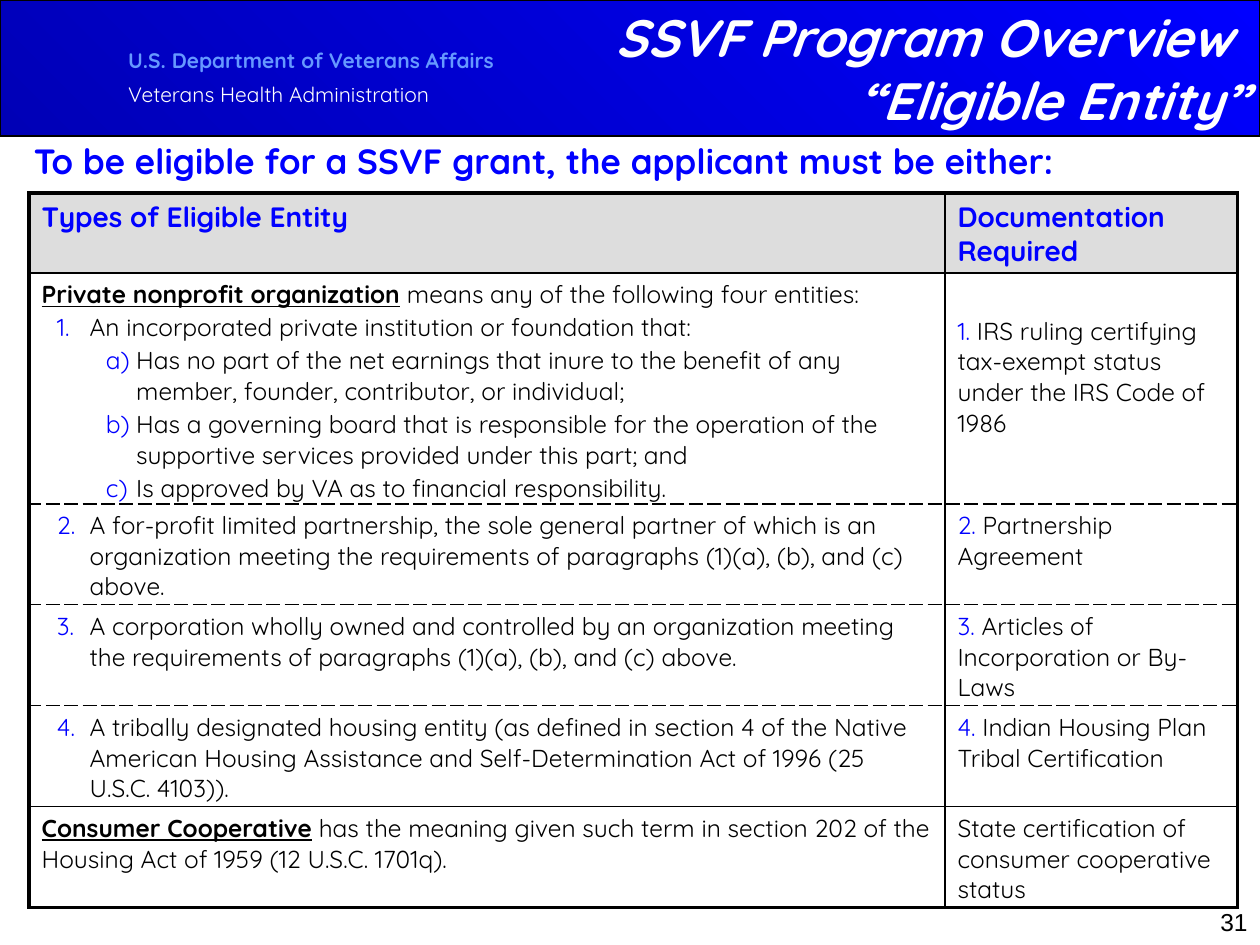
from lxml import etree
from pptx import Presentation
from pptx.dml.color import RGBColor
from pptx.enum import shapes, text
from pptx.oxml.ns import qn
from pptx.util import Pt

FONT = "Quicksand"
BLUE, BLACK, WHITE, GREY = "0000FF", "000000", "FFFFFF", "DDDDDD"
RIGHT = text.PP_ALIGN.RIGHT

TITLE = "SSVF Program Overview \n“Eligible Entity”"
LEAD = "To be eligible for a SSVF grant, the applicant must be either:"
AGENCY = [
    ("U.S. Department of Veterans Affairs", "6699FF", True),
    ("Veterans Health Administration", WHITE, False),
]
PAGE = "31"
HEADERS = ["Types of Eligible Entity", "Documentation Required"]

LEVELS = {
    "plain": None,
    "number": ("arabicPeriod", 27.4, -18.7),
    "letter": ("alphaLcParenR", 54, -17.3),
}
ROWS = [
    (
        [
            ("plain", 1, "Private nonprofit organization", " means any of the following four entities:"),
            ("number", 1, "", "An incorporated private institution or foundation that:"),
            ("letter", 1, "", "Has no part of the net earnings that inure to the benefit of any member, founder, contributor, or individual;"),
            ("letter", 1, "", "Has a governing board that is responsible for the operation of the supportive services provided under this part; and"),
            ("letter", 1, "", "Is approved by VA as to financial responsibility."),
        ],
        ("1.", " IRS ruling certifying tax-exempt status under the IRS Code of 1986"),
    ),
    (
        [("number", 2, "", "A for-profit limited partnership, the sole general partner of which is an organization meeting the requirements of paragraphs (1)(a), (b), and (c) above.")],
        ("2.", " Partnership Agreement"),
    ),
    (
        [("number", 3, "", "A corporation wholly owned and controlled by an organization meeting the requirements of paragraphs (1)(a), (b), and (c) above.")],
        ("3.", " Articles of Incorporation or By-Laws"),
    ),
    (
        [("number", 4, "", "A tribally designated housing entity (as defined in section 4 of the Native American Housing Assistance and Self-Determination Act of 1996 (25 U.S.C. 4103)).")],
        ("4.", " Indian Housing Plan Tribal Certification"),
    ),
    (
        [("plain", 1, "Consumer Cooperative", " has the meaning given such term in section 202 of the Housing Act of 1959 (12 U.S.C. 1701q).")],
        ("", "State certification of consumer cooperative status"),
    ),
]
COL_WIDTHS = [523.4, 167]
ROW_HEIGHTS = [45.7, 132] + [57.7] * 4
RULES = [(2.25, "solid"), (1, "solid")] + [(1, "sysDash")] * 3 + [(1, "solid"), (2.25, "solid")]
UPRIGHTS = [(2.25, "solid"), (1, "solid"), (2.25, "solid")]


def rgb(value):
    return RGBColor.from_string(value)


def write(p, words, size=14, color=BLACK, bold=False, italic=False, underline=False, font=FONT):
    for i, line in enumerate(words.split("\n")):
        if i:
            p.add_line_break()
        r = p.add_run()
        r.text = line
        f = r.font
        f.name, f.size, f.bold, f.italic, f.underline = font, Pt(size), bold, italic, underline
        f.color.rgb = rgb(color)


def place(s, x, y, w, h):
    s.left, s.top, s.width, s.height = Pt(x), Pt(y), Pt(w), Pt(h)
    tf = s.text_frame
    tf.word_wrap = True
    tf.auto_size = text.MSO_AUTO_SIZE.NONE
    return tf


def next_paragraph(tf, i, gap):
    p = tf.add_paragraph() if i else tf.paragraphs[0]
    p.space_before = Pt(gap if i else 0)
    return p


def indent(p, left, first):
    pPr = p._p.get_or_add_pPr()
    pPr.set("marL", str(Pt(left)))
    pPr.set("indent", str(Pt(first)))
    return pPr


def number(p, scheme, left, first, start):
    pPr = indent(p, left, first)
    clr = etree.SubElement(pPr, qn("a:buClr"))
    etree.SubElement(clr, qn("a:srgbClr"), val=BLUE)
    etree.SubElement(pPr, qn("a:buAutoNum"), type=scheme, startAt=str(start))


def borders(cell, sides):
    tcPr = cell._tc.get_or_add_tcPr()
    for i, (side, (width, dash)) in enumerate(sides.items()):
        ln = etree.Element(qn("a:ln" + side), w=str(Pt(width)))
        fill = etree.SubElement(ln, qn("a:solidFill"))
        etree.SubElement(fill, qn("a:srgbClr"), val=BLACK)
        etree.SubElement(ln, qn("a:prstDash"), val=dash)
        tcPr.insert(i, ln)


def add_banner(s):
    sp = s.shapes.add_shape(shapes.MSO_SHAPE.RECTANGLE, 0, 0, Pt(720), Pt(77.8))
    sp.shadow.inherit = False
    sp.fill.gradient()
    sp.fill.gradient_angle = 45
    for stop, color, position in zip(sp.fill.gradient_stops, ("0000B6", BLUE), (0, 1)):
        stop.color.rgb = rgb(color)
        stop.position = position
    sp.line.color.rgb = rgb(BLACK)
    sp.line.width = Pt(0.75)
    tf = place(s.shapes.add_textbox(0, 0, 0, 0), 66.2, 23.8, 288, 43.2)
    for i, (words, color, bold) in enumerate(AGENCY):
        write(next_paragraph(tf, i, 5), words, 12, color, bold)


def add_headings(s):
    title, body = s.shapes.title, s.placeholders[1]
    tree = title.element.getparent()
    for sp in (title, body):
        tree.append(sp.element)
    tf = place(title, 288, 0, 432, 77.8)
    tf.vertical_anchor = text.MSO_ANCHOR.MIDDLE
    p = tf.paragraphs[0]
    p.alignment = RIGHT
    p.line_spacing = Pt(36)
    write(p, TITLE, 30, WHITE, bold=True, italic=True)
    p = next_paragraph(place(body, 12.2, 76.3, 707.8, 414), 0, 0)
    etree.SubElement(indent(p, 41.8, -41.8), qn("a:buNone"))
    write(p, LEAD, 20, BLUE, bold=True)


def add_entities(s):
    table = s.shapes.add_table(len(ROWS) + 1, 2, Pt(16.6), Pt(110.2),
                               Pt(sum(COL_WIDTHS)), Pt(sum(ROW_HEIGHTS))).table
    table.first_row = table.horz_banding = False
    for column, width in zip(table.columns, COL_WIDTHS):
        column.width = Pt(width)
    for i, height in enumerate(ROW_HEIGHTS):
        table.rows[i].height = Pt(height)
        for j in range(2):
            cell = table.cell(i, j)
            cell.margin_bottom = 0
            if i:
                cell.fill.background()
            else:
                cell.fill.solid()
                cell.fill.fore_color.rgb = rgb(GREY)
                write(cell.text_frame.paragraphs[0], HEADERS[j], 16, BLUE, bold=True)
            borders(cell, {"L": UPRIGHTS[j], "R": UPRIGHTS[j + 1], "T": RULES[i], "B": RULES[i + 1]})
    for i, (entity, (mark, document)) in enumerate(ROWS, 1):
        for k, (level, start, term, words) in enumerate(entity):
            p = next_paragraph(table.cell(i, 0).text_frame, k, 1.4)
            if LEVELS[level]:
                number(p, *LEVELS[level], start)
            if term:
                write(p, term, bold=True, underline=True)
            write(p, words)
        p = table.cell(i, 1).text_frame.paragraphs[0]
        if mark:
            write(p, mark, color=BLUE)
        write(p, document)
    table.cell(1, 1).margin_top = Pt(24.4)


def main():
    prs = Presentation()
    prs.slide_width, prs.slide_height = Pt(720), Pt(540)
    s = prs.slides.add_slide(prs.slide_layouts[1])
    add_banner(s)
    add_headings(s)
    add_entities(s)
    p = place(s.shapes.add_textbox(0, 0, 0, 0), 570.2, 514.8, 149.8, 36).paragraphs[0]
    p.alignment = RIGHT
    write(p, PAGE, font="Arial")
    prs.save("out.pptx")


if __name__ == "__main__":
    main()
